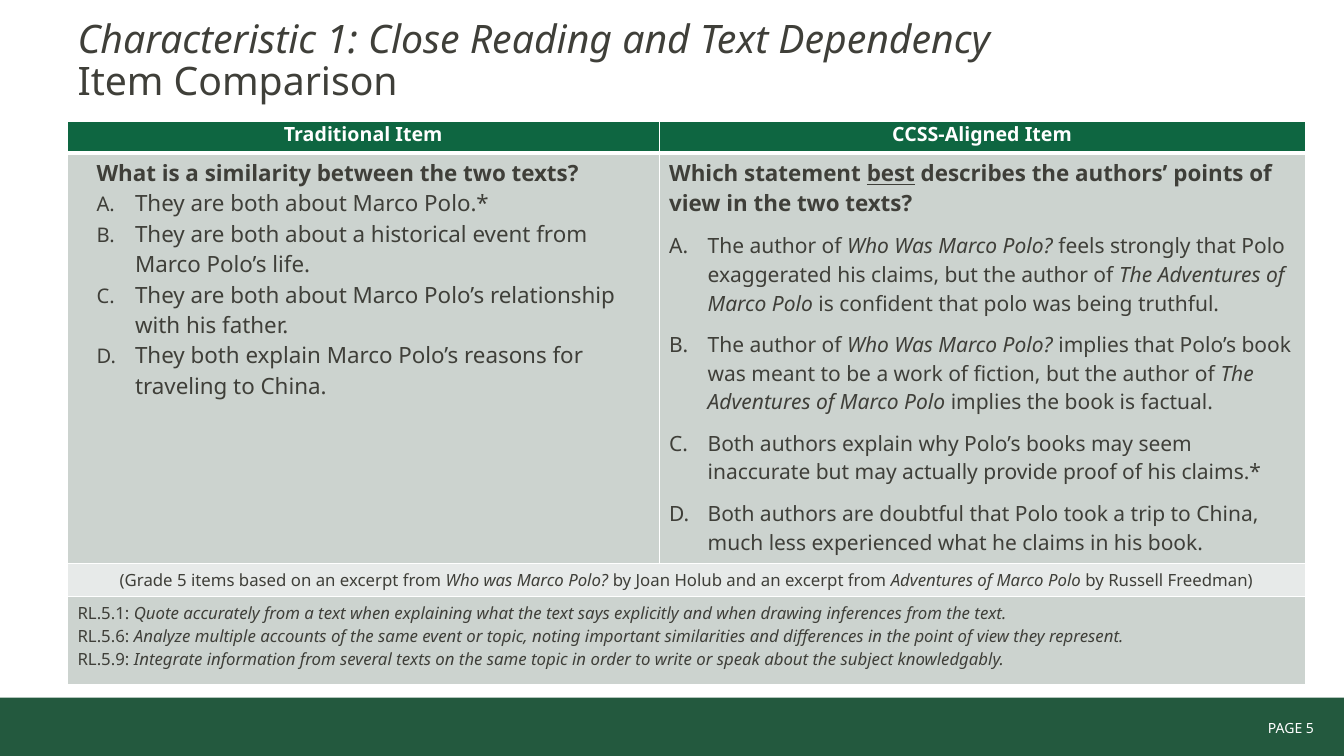
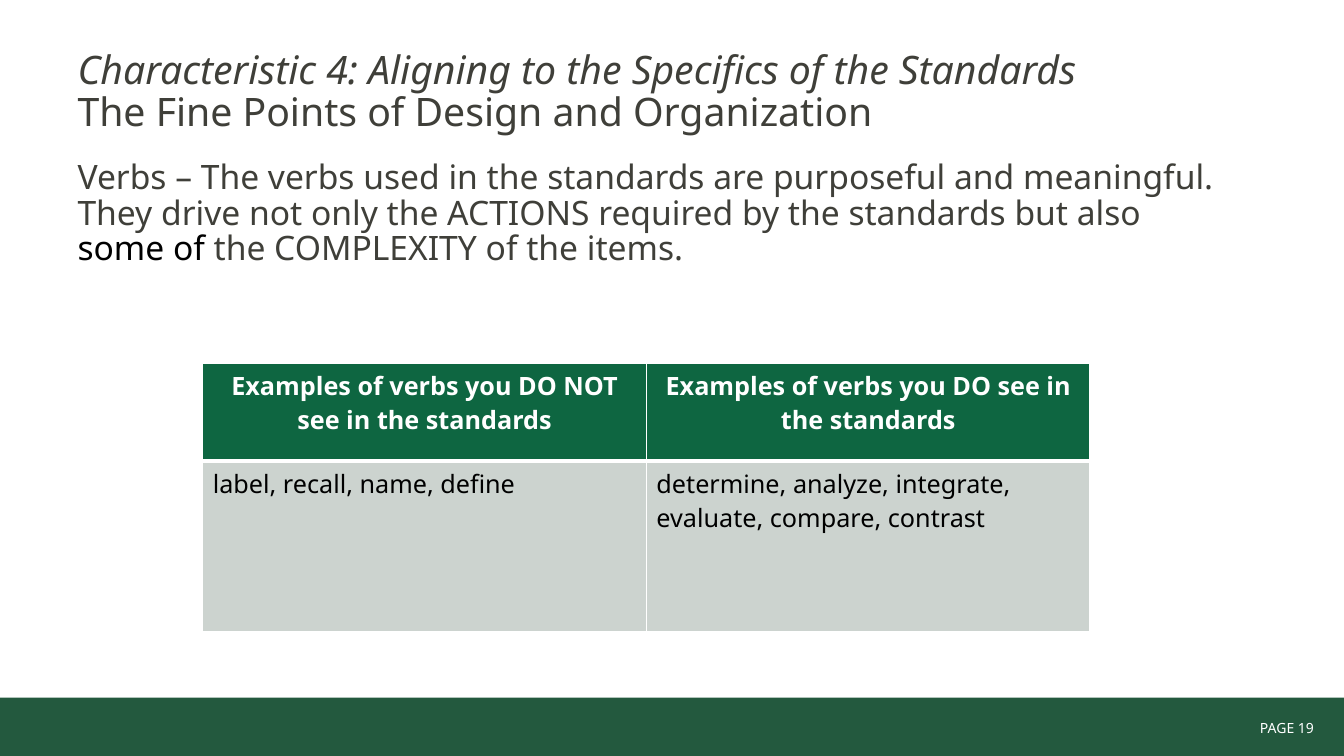
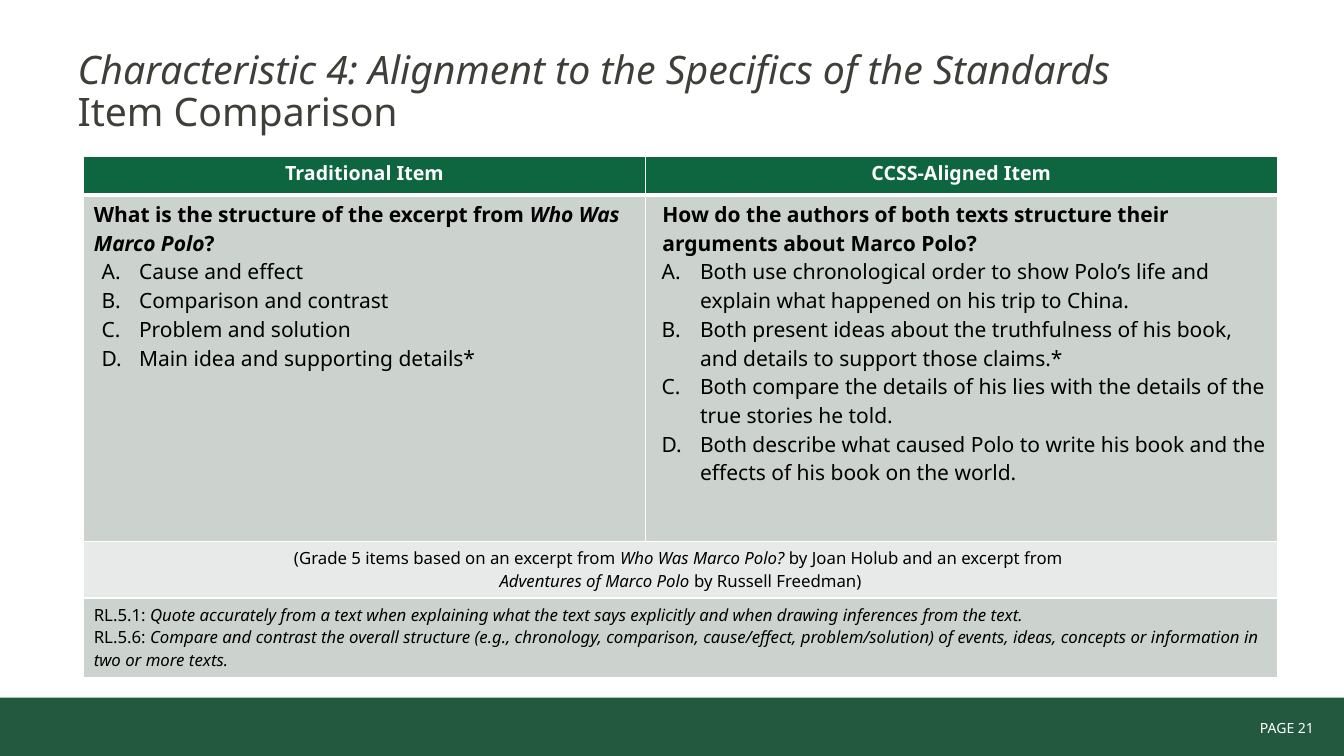
from dataclasses import dataclass, replace

from lxml.etree import SubElement
from pptx import Presentation
from pptx.dml.color import RGBColor
from pptx.enum.shapes import MSO_SHAPE as SHAPE
from pptx.enum.text import MSO_ANCHOR as ANCHOR, MSO_AUTO_SIZE as FIT, PP_ALIGN as ALIGN
from pptx.oxml.ns import qn
from pptx.util import Cm, Pt

FONT = "Noto Sans"
WHITE = RGBColor(0xFF, 0xFF, 0xFF)
BLACK = RGBColor(0x00, 0x00, 0x00)
INK = RGBColor(0x3F, 0x3F, 0x39)
BAND_GREEN = RGBColor(0x23, 0x59, 0x3E)
HEAD_GREEN = RGBColor(0x0E, 0x66, 0x41)
CELL_GREY = RGBColor(0xCC, 0xD3, 0xCF)
NOTE_GREY = RGBColor(0xE7, 0xEA, 0xE9)

SLIDE_W, SLIDE_H = Cm(33.87), Cm(19.05)
LEFT = Cm(1.7)
TITLE_TOP, TITLE_W = Cm(0.76), Cm(30.48)


@dataclass(frozen=True)
class Style:
    """Look of a paragraph; mark is the font switch for text between underscores."""
    size: float
    color: RGBColor = INK
    bold: bool = False
    mark: str = "italic"
    align: ALIGN = ALIGN.LEFT
    margin: float = 0
    indent: float = 0
    before: float = 0
    after: float = 0
    line: object = None
    lettered: bool = False
    letter_pct: int = 100


TITLE = Style(28, line=0.88)
BODY = Style(24, line=0.88)
PAGE = Style(10, WHITE, align=ALIGN.RIGHT)
ITEM_HEAD = Style(14, WHITE, bold=True, align=ALIGN.CENTER, line=Pt(14.8))
VERB_HEAD = Style(18, WHITE, bold=True, align=ALIGN.CENTER)
VERBS = Style(18, BLACK)
NOTE = Style(12, align=ALIGN.CENTER)
STANDARD = Style(12)


def add_runs(p, text, style):
    for i, part in enumerate(text.split("_")):
        for j, line in enumerate(part.split("\n")):
            if j:
                p.add_line_break()
            if line:
                r = p.add_run()
                r.text = line
                font = r.font
                font.name, font.size, font.bold = FONT, Pt(style.size), style.bold
                font.color.rgb = style.color
                if i % 2:
                    setattr(font, style.mark, True)
    for br in p._p.findall(qn("a:br")):
        SubElement(br, qn("a:rPr"), sz=str(int(style.size * 100)))


def write(tf, paragraphs):
    """Fill a text frame with (text, style) pairs."""
    for i, (text, style) in enumerate(paragraphs):
        p = tf.add_paragraph() if i else tf.paragraphs[0]
        pPr = p._p.get_or_add_pPr()
        pPr.set("marL", str(Cm(style.margin)))
        pPr.set("indent", str(Cm(style.indent)))
        if style.lettered:
            SubElement(pPr, qn("a:buSzPct"), val=str(style.letter_pct * 1000))
            SubElement(pPr, qn("a:buFont"), typeface=FONT)
            SubElement(pPr, qn("a:buAutoNum"), type="alphaUcPeriod")
        else:
            SubElement(pPr, qn("a:buNone"))
        p.alignment = style.align
        p.space_before = Pt(style.before if i else 0)
        p.space_after = Pt(style.after)
        if style.line:
            p.line_spacing = style.line
        add_runs(p, text, style)


def place(sp, left, top, width, height):
    sp.left, sp.top, sp.width, sp.height = left, top, width, height


def add_footer(slide, page):
    top = Cm(17.58)
    band = slide.shapes.add_shape(SHAPE.RECTANGLE, 0, top, SLIDE_W, SLIDE_H - top)
    band.shadow.inherit = False
    band.fill.solid()
    band.fill.fore_color.rgb = BAND_GREEN
    band.line.fill.background()
    tf = slide.shapes.add_textbox(Cm(28.04), top + Cm(0.43), Cm(5.32), Cm(0.69)).text_frame
    tf.word_wrap = True
    write(tf, [(f"PAGE {page}", PAGE)])


def add_slide(prs, layout, title, page, title_height=Cm(3.18)):
    slide = prs.slides.add_slide(prs.slide_layouts.get_by_name(layout))
    add_footer(slide, page)
    sp = slide.shapes.title
    place(sp, LEFT, TITLE_TOP, TITLE_W, title_height)
    tf = sp.text_frame
    tf.auto_size = FIT.NONE
    tf.vertical_anchor = ANCHOR.MIDDLE
    write(tf, [(title, TITLE)])
    return slide


def style_cell(cell, fill, top=1, bottom=1):
    """Give a cell white borders and a fill."""
    tcPr = cell._tc.get_or_add_tcPr()
    for side, width in (("L", 1), ("R", 1), ("T", top), ("B", bottom)):
        ln = SubElement(tcPr, qn(f"a:ln{side}"), w=str(Pt(width)))
        SubElement(SubElement(ln, qn("a:solidFill")), qn("a:srgbClr"), val=str(WHITE))
    cell.fill.solid()
    cell.fill.fore_color.rgb = fill


def add_grid(slide, left, top, widths, heights, row_fills):
    """Add a two-column table whose first row is a header."""
    widths, heights = [Cm(w) for w in widths], [Cm(h) for h in heights]
    table = slide.shapes.add_table(len(heights), len(widths), left, top,
                                   sum(widths), sum(heights)).table
    table.first_row = table.horz_banding = False
    for column, width in zip(table.columns, widths):
        column.width = width
    for i, (row, height, fill) in enumerate(zip(table.rows, heights, row_fills)):
        row.height = height
        for cell in row.cells:
            style_cell(cell, fill, top=3 if i == 1 else 1, bottom=1 if i else 3)
    return table


def add_comparison(slide, left, top, widths, heights, items, note, standards, color):
    """Add two test items side by side, above their source and standards."""
    table = add_grid(slide, left, top, widths, heights,
                     [HEAD_GREEN, CELL_GREY, NOTE_GREY, CELL_GREY])
    for col, (heading, item) in enumerate(zip(("Traditional Item", "CCSS-Aligned Item"), items)):
        head = table.cell(0, col)
        head.vertical_anchor = ANCHOR.MIDDLE
        write(head.text_frame, [(heading, ITEM_HEAD)])
        write(table.cell(1, col).text_frame, item)
    for row in (2, 3):
        table.cell(row, 0).merge(table.cell(row, 1))
    write(table.cell(2, 0).text_frame, [(note, replace(NOTE, color=color))])
    write(table.cell(3, 0).text_frame,
          [(text, replace(STANDARD, color=color)) for text in standards])


def make_item(question, answers, question_style, answer_style):
    return [(question, question_style)] + [(text, answer_style) for text in answers]


def build_text_dependency(prs):
    slide = add_slide(
        prs, "Title Only",
        "_Characteristic 1: Close Reading and Text Dependency_\nItem Comparison",
        5, Cm(1.6))
    traditional = make_item(
        "What is a similarity between the two texts?",
        ["They are both about Marco Polo.*",
         "They are both about a historical event from Marco Polo’s life.",
         "They are both about Marco Polo’s relationship with his father.",
         "They both explain Marco Polo’s reasons for traveling to China."],
        Style(16, bold=True, margin=0.48),
        Style(16, margin=1.45, indent=-0.97, lettered=True, letter_pct=90))
    aligned = make_item(
        "Which statement _best_ describes the authors’ points of view in the two texts?",
        ["The author of _Who Was Marco Polo? _feels strongly that Polo exaggerated his claims, "
         "but the author of _The Adventures of Marco Polo_ is confident that polo was being "
         "truthful.",
         "The author of _Who Was Marco Polo?_ implies that Polo’s book was meant to be a work "
         "of fiction, but the author of _The Adventures of Marco Polo _implies the book is "
         "factual.",
         "Both authors explain why Polo’s books may seem inaccurate but may actually provide "
         "proof of his claims.*",
         "Both authors are doubtful that Polo took a trip to China, much less experienced what "
         "he claims in his book."],
        Style(16, bold=True, mark="underline", after=3),
        Style(15, margin=0.97, indent=-0.97, before=6, after=3, lettered=True))
    add_comparison(
        slide, LEFT, Cm(3.07), [14.91, 16.28], [0.76, 10.36, 0.83, 2.21],
        [traditional, aligned],
        "(Grade 5 items based on an excerpt from _Who was Marco Polo? _by Joan Holub and an "
        "excerpt from _Adventures of Marco Polo _by Russell Freedman)",
        ["RL.5.1:_ Quote accurately from a text when explaining what the text says explicitly "
         "and when drawing inferences from the text._",
         "RL.5.6: _Analyze multiple accounts of the same event or topic, noting important "
         "similarities and differences in the point of view they represent._",
         "RL.5.9: _Integrate information from several texts on the same topic in order to "
         "write or speak about the subject knowledgably._"],
        INK)


def build_verbs(prs):
    slide = add_slide(
        prs, "Title and Content",
        "_Characteristic 4: Aligning to the Specifics of the Standards_\n"
        "The Fine Points of Design and Organization", 19)
    body = slide.placeholders[1]
    place(body, LEFT, Cm(3.94), Cm(29.16), Cm(13.08))
    tf = body.text_frame
    tf.auto_size = FIT.NONE
    write(tf, [("Verbs – The verbs used in the standards are purposeful and meaningful. They "
                "drive not only the ACTIONS required by the standards but also _some of _the "
                "COMPLEXITY of the items.", BODY)])
    some_of = tf.paragraphs[0].runs[1].font
    some_of.italic = False
    some_of.color.rgb = BLACK

    table = add_grid(slide, Cm(5.11), Cm(9.16), [11.18, 11.18], [2.46, 4.29],
                     [HEAD_GREEN, CELL_GREY])
    columns = [
        ("Examples of verbs you DO NOT see in the standards", "label, recall, name, define"),
        ("Examples of verbs you DO see in the standards",
         "determine, analyze, integrate, evaluate, compare, contrast"),
    ]
    for col, (heading, verbs) in enumerate(columns):
        write(table.cell(0, col).text_frame, [(heading, VERB_HEAD)])
        write(table.cell(1, col).text_frame, [(verbs, VERBS)])


def build_alignment(prs):
    slide = add_slide(
        prs, "Title Only",
        "_Characteristic 4: Alignment to the Specifics of the Standards_\nItem Comparison", 21)
    question = Style(15, BLACK, bold=True)
    answer = Style(15, BLACK, lettered=True)
    traditional = make_item(
        "What is the structure of the excerpt from _Who Was Marco Polo_?",
        ["Cause and effect", "Comparison and contrast", "Problem and solution",
         "Main idea and supporting details*"],
        question, replace(answer, margin=1.14, indent=-0.94))
    aligned = make_item(
        "How do the authors of both texts structure their arguments about Marco Polo?",
        ["Both use chronological order to show Polo’s life and explain what happened on his "
         "trip to China.",
         "Both present ideas about the truthfulness of his book, and details to support those "
         "claims.*",
         "Both compare the details of his lies with the details of the true stories he told.",
         "Both describe what caused Polo to write his book and the effects of his book on the "
         "world."],
        replace(question, margin=0.18), replace(answer, margin=1.13, indent=-0.97))
    add_comparison(
        slide, Cm(2.11), Cm(3.94), [14.15, 15.93], [0.97, 8.74, 1.42, 2.01],
        [traditional, aligned],
        "(Grade 5 items based on an excerpt from _Who Was Marco Polo? _by Joan Holub and an "
        "excerpt from \n_Adventures of Marco Polo _by Russell Freedman)",
        ["RL.5.1:_ Quote accurately from a text when explaining what the text says explicitly "
         "and when drawing inferences from the text._",
         "RL.5.6: _Compare and contrast the overall structure (e.g., chronology, comparison, "
         "cause/effect, problem/solution) of events, ideas, concepts or information in two or "
         "more texts._"],
        BLACK)


def main():
    prs = Presentation()
    prs.slide_width, prs.slide_height = SLIDE_W, SLIDE_H
    build_text_dependency(prs)
    build_verbs(prs)
    build_alignment(prs)
    prs.save("out.pptx")


if __name__ == "__main__":
    main()
